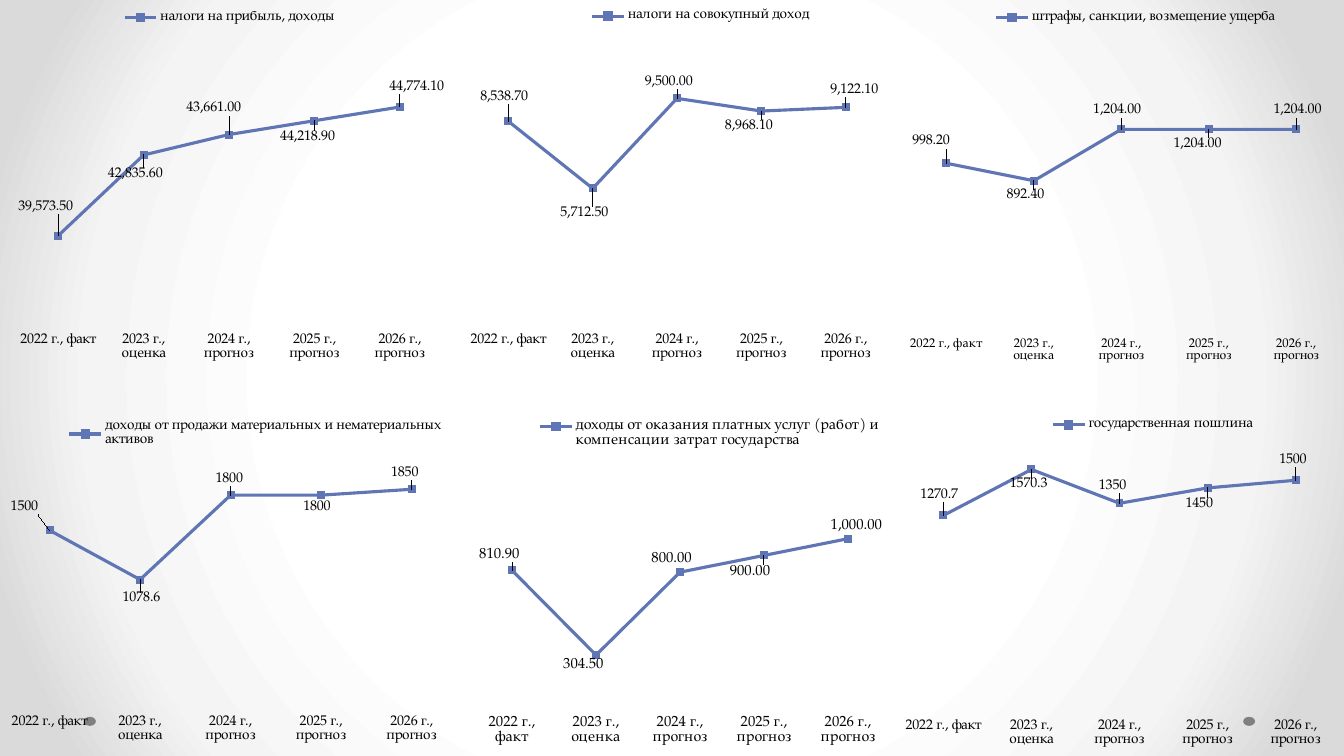
from pptx import Presentation
from pptx.chart.data import CategoryChartData
from pptx.dml.color import RGBColor
from pptx.enum.chart import (XL_CHART_TYPE, XL_LABEL_POSITION, XL_LEGEND_POSITION,
                             XL_MARKER_STYLE, XL_TICK_LABEL_POSITION, XL_TICK_MARK)
from pptx.enum.shapes import MSO_SHAPE
from pptx.oxml import parse_xml
from pptx.oxml.ns import nsdecls, qn
from pptx.util import Pt

LINE = XL_CHART_TYPE.LINE_MARKERS
STACKED_LINE = XL_CHART_TYPE.LINE_MARKERS_STACKED
CENTER = XL_LABEL_POSITION.CENTER
LEGEND_TOP = XL_LEGEND_POSITION.TOP
SQUARE = XL_MARKER_STYLE.SQUARE
NO_TICK = XL_TICK_MARK.NONE
LABELS_LOW = XL_TICK_LABEL_POSITION.LOW
OVAL = MSO_SHAPE.OVAL

COLORS = {"line": "6076B4", "text": "000000", "dot": "808080",
          "center": "FFFFFF", "middle": "F4F4F4", "edge": "DADADA"}
FONT = "TeX Gyre Pagella"
DECIMAL = "#,##0.00"
GENERAL = "General"
YEARS = ["2022 г., факт", "2023 г., оценка", "2024 г., прогноз",
         "2025 г., прогноз", "2026 г., прогноз"]

# box and legend: left, top, width, height in points; plot: fractions of the chart;
# shifts: how far each label's centre lies from its marker, in points
CHARTS = [
    dict(name="налоги на прибыль, доходы",
         values=[39573.5, 42835.6, 43661, 44218.9, 44774.1],
         box=(0, 5, 327, 265), plot=(0.034, 0.188, 0.933, 0.667),
         legend=(84, 6, 160, 13), scale=(36000, 46000), number_format=DECIMAL,
         shifts=[(-9, -20), (-6, 14), (-11, -18), (-5, 12), (12, -14)]),
    dict(name="налоги на совокупный доход",
         values=[8538.7, 5712.5, 9500, 8968.1, 9122.1],
         box=(322, 0, 323, 270), plot=(0.034, 0.229, 0.933, 0.629),
         legend=(418, 5, 165, 13), scale=(0, 10000), number_format=DECIMAL,
         shifts=[(-3, -17), (-6, 18), (-6, -11), (-9, 11), (6, -12)]),
    dict(name="штрафы, санкции, возмещение ущерба",
         values=[998.2, 892.4, 1204, 1204, 1204],
         box=(638.5, 1.5, 332.5, 263), plot=(0.019, 0.258, 0.939, 0.627),
         legend=(706, 6, 210, 13), scale=(0, 1400), number_format=DECIMAL,
         category_size=9,
         shifts=[(-11, -15), (-6, 11), (-3, -13), (-8, 11), (1, -13)]),
    dict(name="доходы от продажи материальных и нематериальных активов",
         values=[1500, 1078.6, 1800, 1800, 1850],
         box=(-8, 276, 345.5, 264), plot=(0.032, 0.231, 0.936, 0.634),
         legend=(46, 298, 273, 24), scale=(0, 2000),
         shifts=[(-18, -16), (1, 14), (-1, -11), (-3, 9), (-5, -11)]),
    dict(name="доходы от оказания платных услуг (работ) и компенсации затрат государства",
         values=[810.9, 304.5, 800, 900, 1000],
         box=(324, 286, 317.5, 254), plot=(0.037, 0.295, 0.945, 0.565),
         legend=(382, 298, 250, 24), scale=(0, 1200), number_format=DECIMAL,
         size=10.5, category_size=10.5,
         shifts=[(-9, -11), (-9, 7), (-6, -9), (-10, 12), (6, -9)]),
    dict(name="государственная пошлина",
         values=[1270.7, 1570.3, 1350, 1450, 1500],
         box=(625.5, 287.5, 332.5, 252.5), plot=(0.051, 0.09, 0.946, 0.781),
         legend=(747, 297, 153, 13), scale=(0, 1800), chart_type=STACKED_LINE,
         shifts=[(-3, -14), (-2, 11), (-5, -12), (-6, 12), (-2, -14)]),
]


def color(name):
    return RGBColor.from_string(COLORS[name])


def chart_layout(x, y, width=None, height=None, inner=False):
    """Manual layout in chart fractions; without a size, x and y are offsets."""
    parts = ['<c:layoutTarget val="inner"/>'] if inner else []
    if width is not None:
        parts.append('<c:xMode val="edge"/><c:yMode val="edge"/>')
    values = zip("xywh", (x, y, width, height))
    parts += [f'<c:{tag} val="{value:.4f}"/>' for tag, value in values if value is not None]
    return parse_xml(f'<c:layout {nsdecls("c")}><c:manualLayout>{"".join(parts)}'
                     '</c:manualLayout></c:layout>')


class SlideBuilder:
    def __init__(self, slide):
        self.slide = slide

    def radial_background(self, stops):
        stop_xml = "".join(f'<a:gs pos="{percent * 1000}"><a:srgbClr val="{COLORS[name]}"/></a:gs>'
                           for percent, name in stops)
        background = parse_xml(
            f'<p:bg {nsdecls("p", "a")}><p:bgPr><a:gradFill rotWithShape="1">'
            f'<a:gsLst>{stop_xml}</a:gsLst><a:path path="circle">'
            '<a:fillToRect l="50000" t="50000" r="50000" b="50000"/></a:path>'
            '</a:gradFill><a:effectLst/></p:bgPr></p:bg>')
        self.slide.element.cSld.insert(0, background)

    def dot(self, left, top, width, height):
        shape = self.slide.shapes.add_shape(OVAL, Pt(left), Pt(top), Pt(width), Pt(height))
        shape.shadow.inherit = False
        shape.fill.solid()
        shape.fill.fore_color.rgb = color("dot")
        shape.line.fill.background()

    def line_chart(self, name, values, box, plot, legend, scale, shifts,
                   number_format=GENERAL, size=10, category_size=10, chart_type=LINE):
        data = CategoryChartData(number_format=number_format)
        data.categories = YEARS
        data.add_series(name, values)
        frame = self.slide.shapes.add_chart(chart_type, *map(Pt, box), data)
        chart = frame.chart
        chart.has_title = False
        chart.font.name = FONT
        chart.font.size = Pt(size)
        chart.font.color.rgb = color("text")

        chart.value_axis.minimum_scale, chart.value_axis.maximum_scale = scale
        chart.value_axis.has_major_gridlines = False
        chart.value_axis.tick_labels.number_format = number_format
        chart.value_axis.visible = False
        category_axis = chart.category_axis
        category_axis.major_tick_mark = NO_TICK
        category_axis.tick_label_position = LABELS_LOW
        category_axis.tick_labels.font.size = Pt(category_size)
        category_axis.format.line.fill.background()

        plot_area = chart.plots[0]._element.getparent()
        for layout in plot_area.findall(qn("c:layout")):
            plot_area.remove(layout)
        plot_area.insert(0, chart_layout(*plot, inner=True))
        self.place_legend(chart, legend, box)
        series = chart.plots[0].series[0]
        self.style_series(series)
        self.label_points(series, shifts, box, number_format)

    def place_legend(self, chart, legend, box):
        chart.has_legend = True
        chart.legend.position = LEGEND_TOP
        chart.legend.include_in_layout = False
        left, top, width, height = box
        layout = chart_layout((legend[0] - left) / width, (legend[1] - top) / height,
                              legend[2] / width, legend[3] / height)
        element = chart.legend._element
        for old_layout in element.findall(qn("c:layout")):
            element.remove(old_layout)
        element.find(qn("c:legendPos")).addnext(layout)

    def style_series(self, series):
        series.smooth = False
        series.format.line.color.rgb = color("line")
        series.format.line.width = Pt(2.25)
        marker = series.marker
        marker.style = SQUARE
        marker.size = 5
        marker.format.fill.solid()
        marker.format.fill.fore_color.rgb = color("line")
        marker.format.line.color.rgb = color("line")

    def label_points(self, series, shifts, box, number_format):
        labels = series.data_labels
        labels.show_value = True
        labels.position = CENTER
        labels.number_format = number_format
        labels.number_format_is_linked = False
        for index in range(len(shifts)):
            series.points[index].data_label.position = CENTER
        label_elements = labels._element.findall(qn("c:dLbl"))
        for label, (across, down) in zip(label_elements, shifts):
            layout = chart_layout(across / box[2], down / box[3])
            label.find(qn("c:idx")).addnext(layout)
            layout.addnext(parse_xml(f'<c:numFmt {nsdecls("c")} formatCode="{number_format}" '
                                     'sourceLinked="0"/>'))


def main():
    presentation = Presentation()
    presentation.slide_width, presentation.slide_height = Pt(960), Pt(540)
    builder = SlideBuilder(presentation.slides.add_slide(presentation.slide_layouts[6]))
    builder.radial_background([(50, "center"), (76, "middle"), (92, "edge")])
    for left in (888, 60):
        builder.dot(left, 512, 8.5, 6.5)
    for chart in CHARTS:
        builder.line_chart(**chart)
    presentation.save("out.pptx")


if __name__ == "__main__":
    main()
